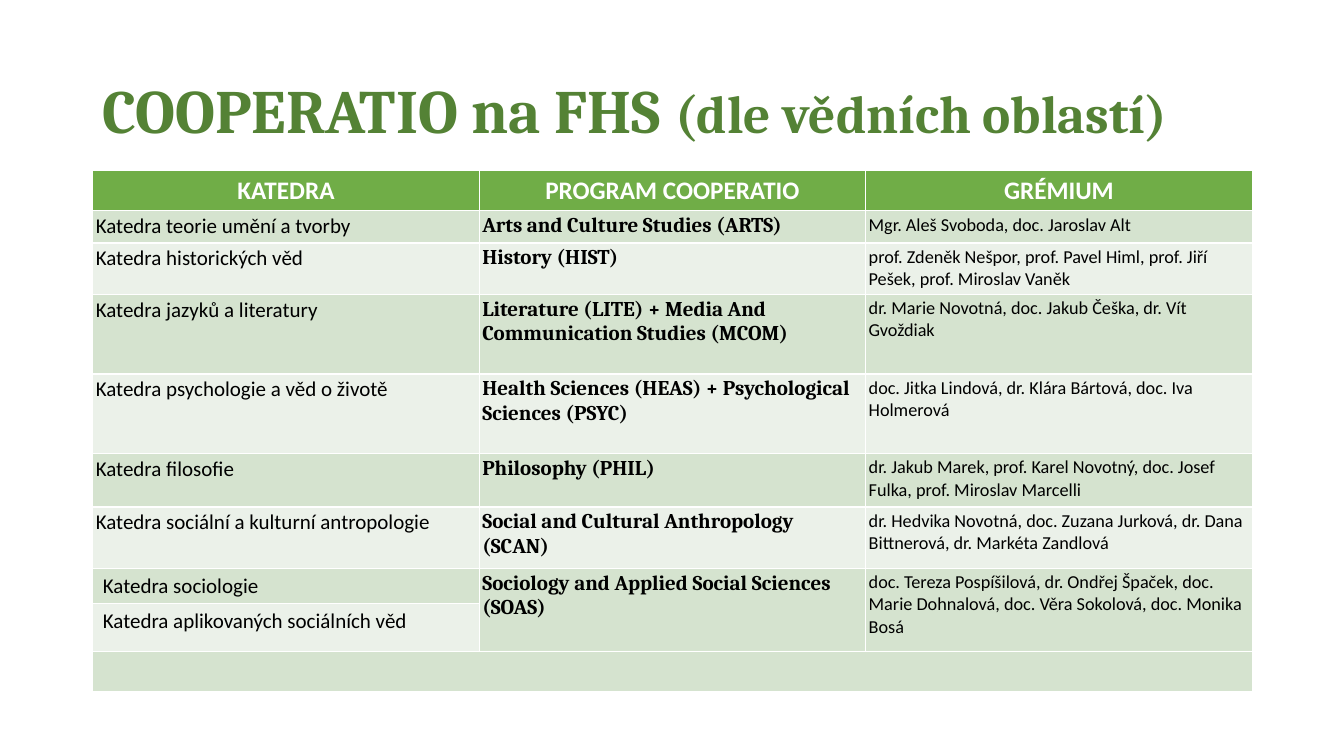
from pptx import Presentation
from pptx.dml.color import RGBColor
from pptx.enum.text import MSO_ANCHOR as Anchor, PP_ALIGN as Align
from pptx.util import Inches, Pt

TITLE = [("COOPERATIO na FHS ", 44), ("(dle vědních oblastí)", 38)]
HEADINGS = ("KATEDRA", "PROGRAM COOPERATIO", "GRÉMIUM")
DEPARTMENTS = [
    ("Katedra teorie umění a tvorby", "Arts and Culture Studies (ARTS)",
     "Mgr. Aleš Svoboda, doc. Jaroslav Alt"),
    ("Katedra historických věd", "History (HIST)",
     "prof. Zdeněk Nešpor, prof. Pavel Himl, prof. Jiří Pešek, prof. Miroslav Vaněk"),
    ("Katedra jazyků a literatury",
     "Literature (LITE) + Media And Communication Studies (MCOM)",
     "dr. Marie Novotná, doc. Jakub Češka, dr. Vít Gvoždiak"),
    ("Katedra psychologie a věd o životě",
     "Health Sciences (HEAS) + Psychological Sciences (PSYC)",
     "doc. Jitka Lindová, dr. Klára Bártová, doc. Iva Holmerová"),
    ("Katedra filosofie", "Philosophy (PHIL)",
     "dr. Jakub Marek, prof. Karel Novotný, doc. Josef Fulka, prof. Miroslav Marcelli"),
    ("Katedra sociální a kulturní antropologie",
     "Social and Cultural Anthropology (SCAN)",
     "dr. Hedvika Novotná, doc. Zuzana Jurková, dr. Dana Bittnerová, dr. Markéta Zandlová"),
    ("Katedra sociologie", "Sociology and Applied Social Sciences (SOAS)",
     "doc. Tereza Pospíšilová, dr. Ondřej Špaček, doc. Marie Dohnalová, "
     "doc. Věra Sokolová, doc. Monika Bosá"),
    ("Katedra aplikovaných sociálních věd", "", ""),
    ("", "", ""),
]
ROW_HEIGHTS = (0.4, 0.32, 0.51, 0.79, 0.79, 0.53, 0.61, 0.35, 0.47, 0.4)
MERGES = [((7, 1), (8, 1)), ((7, 2), (8, 2)), ((9, 0), (9, 2))]
HEADING_FONT = {"name": "Calibri", "size": Pt(18), "bold": True}
COLUMN_FONTS = (
    {"name": "Calibri", "size": Pt(15), "bold": False},
    {"name": "Cambria", "size": Pt(15), "bold": True},
    {"name": "Calibri", "size": Pt(13), "bold": False},
)
TIGHT = dict.fromkeys(
    ("margin_left", "margin_top", "margin_right", "margin_bottom"), Inches(0.03))


def paint(color_format, color):
    color_format.rgb = RGBColor.from_string(color)


def apply(target, values):
    for name, value in values.items():
        setattr(target, name, value)


def write(paragraph, text, font, color):
    run = paragraph.add_run()
    run.text = text
    apply(run.font, font)
    paint(run.font.color, color)


def add_title(slide, left, top, width, height):
    frame = slide.shapes.add_textbox(
        Inches(left), Inches(top), Inches(width), Inches(height)).text_frame
    apply(frame, {"word_wrap": True, "vertical_anchor": Anchor.MIDDLE})
    heading = frame.paragraphs[0]
    heading.line_spacing = 0.9
    for text, size in TITLE:
        write(heading, text, {"name": "Cambria", "size": Pt(size), "bold": True}, "548235")


def add_programmes(slide, left, top, width):
    rows = [HEADINGS] + DEPARTMENTS
    table = slide.shapes.add_table(
        len(rows), len(HEADINGS), Inches(left), Inches(top),
        Inches(width), Inches(sum(ROW_HEIGHTS))).table
    for row, height in zip(table.rows, ROW_HEIGHTS):
        row.height = Inches(height)
    for r, texts in enumerate(rows):
        fill = "70AD47" if r == 0 else ("EBF1E9", "D5E3CF")[r % 2]
        for c, text in enumerate(texts):
            cell = table.cell(r, c)
            cell.fill.solid()
            paint(cell.fill.fore_color, fill)
            paragraph = cell.text_frame.paragraphs[0]
            if r == 0:
                paragraph.alignment = Align.CENTER
                write(paragraph, text, HEADING_FONT, "FFFFFF")
            elif text:
                write(paragraph, text, COLUMN_FONTS[c], "000000")
                if r < 7 or c > 0:
                    apply(cell, TIGHT)
    for first, last in MERGES:
        table.cell(*first).merge(table.cell(*last))


def main():
    deck = Presentation()
    apply(deck, {"slide_width": Inches(13.33), "slide_height": Inches(7.5)})
    slide = deck.slides.add_slide(deck.slide_layouts[6])
    add_title(slide, 0.92, 0.4, 11.5, 1.45)
    add_programmes(slide, 0.92, 1.69, 11.5)
    deck.save("out.pptx")


if __name__ == "__main__":
    main()
